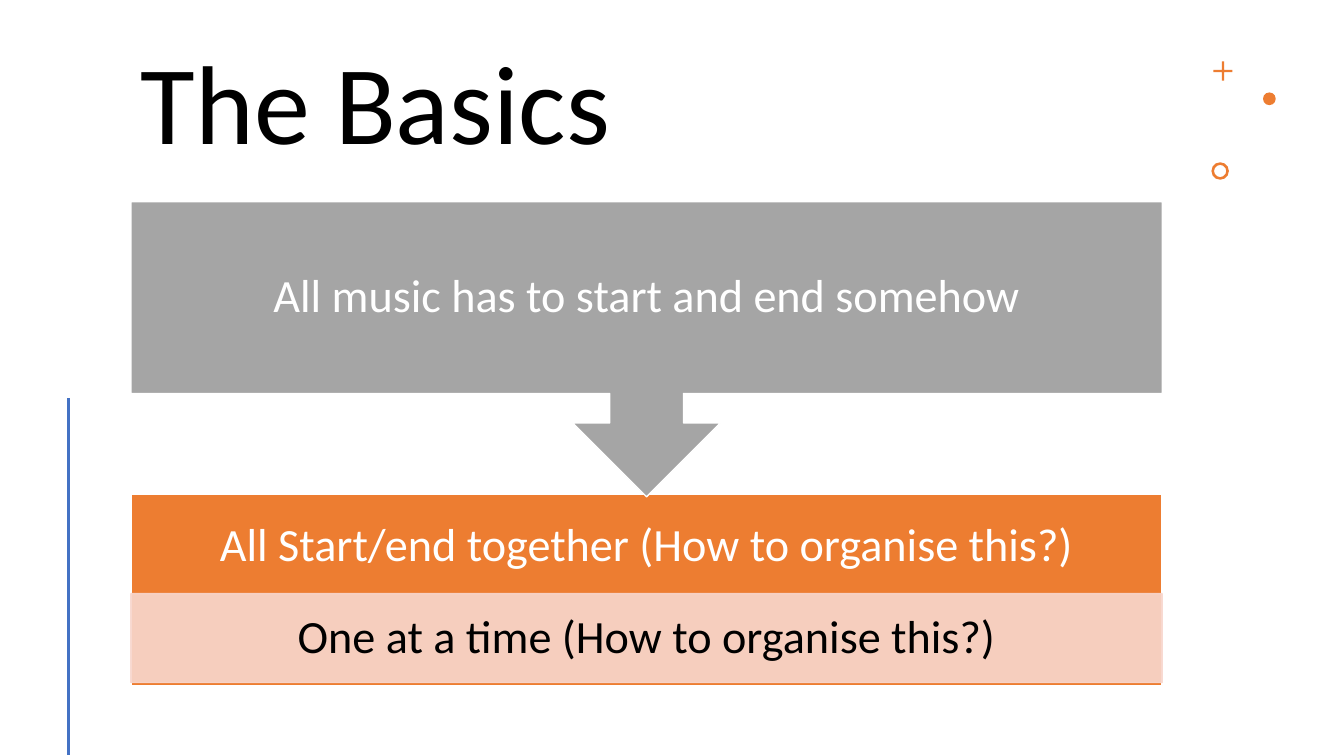
from dataclasses import dataclass

from lxml import etree
from pptx import Presentation
from pptx.dml.color import RGBColor
from pptx.enum.shapes import MSO_CONNECTOR, MSO_SHAPE
from pptx.enum.text import MSO_ANCHOR, PP_ALIGN
from pptx.oxml.ns import qn
from pptx.util import Cm, Pt

RECT, CALLOUT = MSO_SHAPE.RECTANGLE, MSO_SHAPE.DOWN_ARROW_CALLOUT
PLUS, DOT, RING = MSO_SHAPE.CROSS, MSO_SHAPE.OVAL, MSO_SHAPE.DONUT
STRAIGHT = MSO_CONNECTOR.STRAIGHT
MIDDLE = MSO_ANCHOR.MIDDLE
LEFT, CENTER = PP_ALIGN.LEFT, PP_ALIGN.CENTER


@dataclass(frozen=True)
class Theme:
    font: str = "Calibri"
    title_size: int = 80
    body_size: int = 33
    black: str = "000000"
    white: str = "FFFFFF"
    orange: str = "ED7D31"
    blush: str = "F8D7CE"
    grey: str = "A5A5A5"
    blue: str = "4472C4"
    line_width: float = 1
    accent_width: float = 2


THEME = Theme()


def write(shape, text, size, color, align=CENTER, side=0.66, top=0.66, bottom=0.66):
    frame = shape.text_frame
    frame_format = {
        "word_wrap": True, "vertical_anchor": MIDDLE,
        "margin_left": Cm(side), "margin_right": Cm(side),
        "margin_top": Cm(top), "margin_bottom": Cm(bottom),
    }
    for name, value in frame_format.items():
        setattr(frame, name, value)
    paragraph = frame.paragraphs[0]
    paragraph.text = text
    paragraph.alignment = align
    paragraph.line_spacing = 0.9
    for name, value in {"name": THEME.font, "size": Pt(size)}.items():
        setattr(paragraph.font, name, value)
    paragraph.font.color.rgb = RGBColor.from_string(color)


def add_block(slide, kind, box, fill, line=None, adjustments=()):
    block = slide.shapes.add_shape(kind, *(Cm(length) for length in box))
    block.shadow.inherit = False
    block.fill.solid()
    block.fill.fore_color.rgb = RGBColor.from_string(fill)
    if line:
        block.line.color.rgb = RGBColor.from_string(line)
        block.line.width = Pt(THEME.line_width)
    else:
        block.line.fill.background()
    for index, value in enumerate(adjustments):
        block.adjustments[index] = value
    return block


def set_opacity(block, percent):
    for color in block._element.spPr.iter(qn("a:srgbClr")):
        etree.SubElement(color, qn("a:alpha")).set("val", str(percent * 1000))


def add_title(slide, box, text):
    title = slide.shapes.add_textbox(*(Cm(length) for length in box))
    write(title, text, THEME.title_size, THEME.black, LEFT, 0.25, 0.13, 0.13)


def add_ornaments(slide, left, top):
    # Plus, dot and ring, as offsets from the corner
    ornaments = [
        (PLUS, 0.05, 0, 0.48, [0.44]),
        (DOT, 1.3, 0.78, 0.32, []),
        (RING, 0, 2.54, 0.44, [0.15]),
    ]
    for kind, x, y, size, adjustments in ornaments:
        add_block(slide, kind, (left + x, top + y, size, size), THEME.orange,
                  adjustments=adjustments)


def add_side_line(slide, x, top, bottom):
    side_line = slide.shapes.add_connector(STRAIGHT, Cm(x), Cm(top), Cm(x), Cm(bottom))
    side_line.line.color.rgb = RGBColor.from_string(THEME.blue)
    side_line.line.width = Pt(THEME.accent_width)
    etree.SubElement(side_line._element.spPr, qn("a:effectLst"))


def add_process(slide, box, premise, together, in_turn):
    left, top, width, height = box
    answers_height, turn_height, turn_offset = 4.83, 2.24, 2.51
    answers_top = top + height - answers_height
    heading_height = 2.62

    # Lower step: heading band above a pale band
    answers = add_block(slide, RECT, (left, answers_top, width, answers_height),
                        THEME.orange, THEME.white)
    write(answers, together, THEME.body_size, THEME.white,
          bottom=answers_height - heading_height + 0.66)
    turn = add_block(slide, RECT, (left, answers_top + turn_offset, width, turn_height),
                     THEME.blush, THEME.blush)
    set_opacity(turn, 90)
    write(turn, in_turn, THEME.body_size, THEME.black, top=0.13, bottom=0.13)

    # Upper step, whose arrow points at the lower one
    start = add_block(slide, CALLOUT, (left, top, width, 7.44), THEME.grey,
                      THEME.white, [0.25, 0.25, 0.25, 0.65])
    write(start, premise, THEME.body_size, THEME.white)


def main():
    deck = Presentation()
    deck.slide_width, deck.slide_height = Cm(33.87), Cm(19.05)
    slide = deck.slides.add_slide(deck.slide_layouts[6])
    left, width = 3.3, 25.99

    add_title(slide, (left, 1.07, width, 3.33), "The Basics")
    add_ornaments(slide, 30.53, 1.55)
    add_side_line(slide, 1.73, 10.03, 19.03)
    add_process(slide, (left, 5.08, width, 12.2),
                "All music has to start and end somehow",
                "All Start/end together (How to organise this?)",
                "One at a time (How to organise this?)")
    deck.save("out.pptx")


if __name__ == "__main__":
    main()
